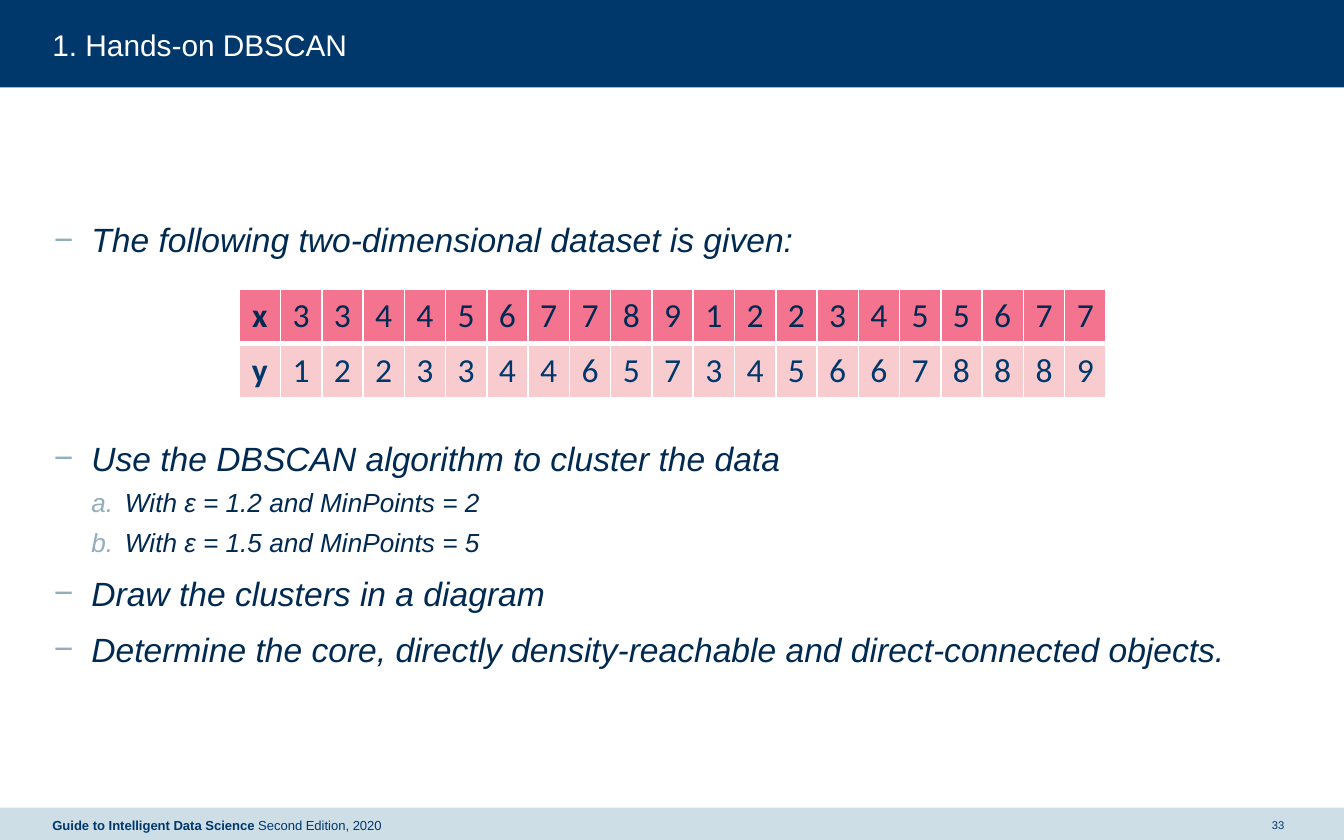
from dataclasses import dataclass
from typing import Optional

from lxml.etree import SubElement
from pptx import Presentation
from pptx.dml.color import RGBColor
from pptx.enum.shapes import MSO_SHAPE
from pptx.enum.text import MSO_ANCHOR, MSO_AUTO_SIZE, PP_ALIGN
from pptx.oxml.ns import qn
from pptx.util import Inches, Pt


@dataclass(frozen=True)
class Theme:
    font: str = "Arial"
    table_font: str = "Calibri"
    navy: str = "00386C"
    ink: str = "002A51"
    white: str = "FFFFFF"
    footer_band: str = "CDDEE7"
    bullet: str = "92AEBC"
    x_fill: str = "F47490"
    y_fill: str = "F8CCCF"
    title_size: float = 16
    task_size: float = 18
    subtask_size: float = 14
    footer_size: float = 7
    number_size: float = 6
    line_spacing: float = 1.04


THEME = Theme()


@dataclass(frozen=True)
class Box:
    left: float
    top: float
    width: float
    height: float

    def lengths(self) -> tuple:
        return tuple(Inches(v) for v in (self.left, self.top, self.width, self.height))


@dataclass(frozen=True)
class Task:
    text: str
    level: int = 0
    space_before: float = 7.5


@dataclass(frozen=True)
class DataRow:
    name: str
    values: str
    fill: str
    color: str
    bottom_border: float


TASKS = (
    Task("The following two-dimensional dataset is given:"),
    # The large gap leaves room for the data table
    Task("Use the DBSCAN algorithm to cluster the data", space_before=94.5),
    Task("With ε = 1.2 and MinPoints = 2", 1, 3.8),
    Task("With ε = 1.5 and MinPoints = 5", 1, 3.8),
    Task("Draw the clusters in a diagram"),
    Task("Determine the core, directly density-reachable and direct-connected objects."),
)
DATASET = (
    DataRow("x", "33445677891223455677", THEME.x_fill, THEME.ink, 3),
    DataRow("y", "12233446573456678889", THEME.y_fill, THEME.navy, 1),
)


def style_run(run, size: float, color: str, font: str = THEME.font,
              bold: bool = False, italic: bool = False) -> None:
    run.font.name = font
    run.font.size = Pt(size)
    run.font.bold = bold
    run.font.italic = italic
    run.font.color.rgb = RGBColor.from_string(color)


def prepare_frame(frame, anchor: MSO_ANCHOR = MSO_ANCHOR.TOP) -> None:
    frame.word_wrap = True
    frame.auto_size = MSO_AUTO_SIZE.NONE
    frame.vertical_anchor = anchor
    frame.margin_left = frame.margin_right = frame.margin_top = frame.margin_bottom = 0


def add_band(slide, box: Box, color: str) -> None:
    band = slide.shapes.add_shape(MSO_SHAPE.RECTANGLE, *box.lengths())
    band.shadow.inherit = False
    band.fill.solid()
    band.fill.fore_color.rgb = RGBColor.from_string(color)
    band.line.fill.background()


def format_title(slide, box: Box, text: str) -> None:
    title = slide.shapes.title
    title.left, title.top, title.width, title.height = box.lengths()
    prepare_frame(title.text_frame)
    title.text_frame.text = text
    heading = title.text_frame.paragraphs[0]
    heading.alignment = PP_ALIGN.LEFT
    heading.line_spacing = THEME.line_spacing
    style_run(heading.runs[0], THEME.title_size, THEME.white)
    slide.shapes._spTree.append(title._element)  # in front of the bands


def add_footer_text(slide, box: Box, size: float, text: str,
                    bold_text: Optional[str] = None,
                    align: PP_ALIGN = PP_ALIGN.LEFT) -> None:
    frame = slide.shapes.add_textbox(*box.lengths()).text_frame
    prepare_frame(frame, MSO_ANCHOR.MIDDLE)
    line = frame.paragraphs[0]
    line.alignment = align
    for part, bold in ((bold_text, True), (text, False)):
        if part:
            run = line.add_run()
            run.text = part
            style_run(run, size, THEME.navy, bold=bold)


def add_bullet(paragraph, level: int) -> None:
    """Dashes mark the tasks, letters mark their variants."""
    properties = paragraph._p.get_or_add_pPr()
    margin, indent = ((0.29, -0.28), (0.54, -0.25))[level]
    properties.set("marL", str(Inches(margin)))
    properties.set("indent", str(Inches(indent)))
    color = SubElement(properties, qn("a:buClr"))
    SubElement(color, qn("a:srgbClr"), val=THEME.bullet)
    SubElement(properties, qn("a:buFont"), typeface=THEME.font)
    if level:
        SubElement(properties, qn("a:buAutoNum"), type="alphaLcPeriod")
    else:
        SubElement(properties, qn("a:buChar"), char="−")


def add_tasks(slide, box: Box) -> None:
    frame = slide.shapes.add_textbox(*box.lengths()).text_frame
    prepare_frame(frame)
    frame.text = "\n".join(task.text for task in TASKS)
    for task, paragraph in zip(TASKS, frame.paragraphs):
        paragraph.level = task.level
        paragraph.line_spacing = THEME.line_spacing
        paragraph.space_before = Pt(task.space_before)
        add_bullet(paragraph, task.level)
        size = THEME.subtask_size if task.level else THEME.task_size
        style_run(paragraph.runs[0], size, THEME.ink, italic=True)


def add_borders(cell, bottom: float) -> None:
    properties = cell._tc.get_or_add_tcPr()
    widths = {"a:lnL": 1, "a:lnR": 1, "a:lnT": 1, "a:lnB": bottom}
    for position, (tag, width) in enumerate(widths.items()):
        line = properties.makeelement(qn(tag), {"w": str(Pt(width))})
        properties.insert(position, line)
        fill = SubElement(line, qn("a:solidFill"))
        SubElement(fill, qn("a:srgbClr"), val=THEME.white)


def add_dataset(slide, box: Box) -> None:
    column_count = 1 + len(DATASET[0].values)
    table = slide.shapes.add_table(len(DATASET), column_count, *box.lengths()).table
    for column in table.columns:
        column.width = Inches(box.width / column_count)
    for row_index, row in enumerate(DATASET):
        for column_index, value in enumerate(row.name + row.values):
            cell = table.cell(row_index, column_index)
            cell.margin_left = cell.margin_right = Inches(0.05)
            cell.fill.solid()
            cell.fill.fore_color.rgb = RGBColor.from_string(row.fill)
            add_borders(cell, row.bottom_border)
            cell.text_frame.text = value
            paragraph = cell.text_frame.paragraphs[0]
            paragraph.alignment = PP_ALIGN.CENTER
            style_run(paragraph.runs[0], THEME.task_size, row.color,
                      THEME.table_font, bold=column_index == 0)


def main() -> None:
    presentation = Presentation()
    presentation.slide_width, presentation.slide_height = Inches(10), Inches(6.25)
    slide = presentation.slides.add_slide(presentation.slide_layouts[5])
    add_band(slide, Box(0, 0, 10, 0.65), THEME.navy)
    add_band(slide, Box(0, 6.01, 10, 0.26), THEME.footer_band)
    format_title(slide, Box(0.39, 0.19, 9.22, 0.27), "1. Hands-on DBSCAN")
    add_footer_text(slide, Box(9.41, 6.01, 0.2, 0.26), THEME.number_size, "33",
                    align=PP_ALIGN.CENTER)
    add_tasks(slide, Box(0.39, 1.62, 9.16, 3.64))
    add_footer_text(slide, Box(0.39, 6.01, 4.39, 0.26), THEME.footer_size,
                    "Second Edition, 2020", "Guide to Intelligent Data Science ")
    add_dataset(slide, Box(1.78, 2.15, 6.45, 0.81))
    presentation.save("out.pptx")


if __name__ == "__main__":
    main()
